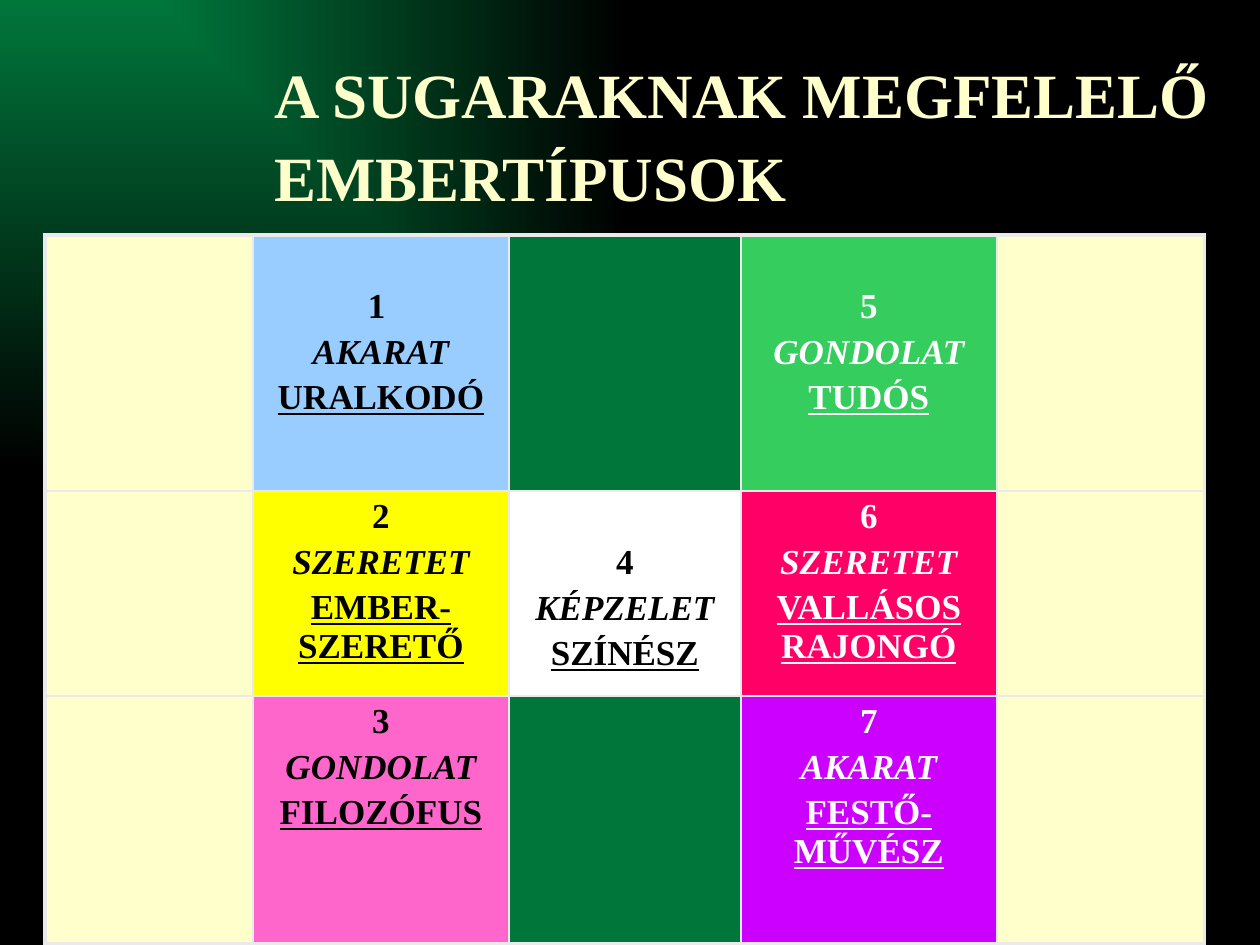
from lxml import etree
from pptx import Presentation
from pptx.dml.color import RGBColor
from pptx.enum.text import MSO_ANCHOR, PP_ALIGN
from pptx.oxml.ns import qn
from pptx.util import Pt

PX = 914400 // 126
FONT = "Times New Roman"
MIDDLE = MSO_ANCHOR.MIDDLE
CENTER = PP_ALIGN.CENTER

GREEN = RGBColor(0x00, 0x76, 0x3B)
BLACK = RGBColor(0x00, 0x00, 0x00)
WHITE = RGBColor(0xFF, 0xFF, 0xFF)
CREAM = RGBColor(0xFF, 0xFF, 0xCC)
BLUE = RGBColor(0x99, 0xCC, 0xFF)
LIME = RGBColor(0x35, 0xCD, 0x5D)
YELLOW = RGBColor(0xFF, 0xFF, 0x00)
RED = RGBColor(0xFF, 0x00, 0x66)
PINK = RGBColor(0xFF, 0x66, 0xCC)
PURPLE = RGBColor(0xCC, 0x00, 0xFF)
BORDER = RGBColor(0xEA, 0xEA, 0xEA)

TITLE = "A SUGARAKNAK MEGFELELŐ EMBERTÍPUSOK"
TITLE_BOX = (262, 32, 977, 199)
TABLE_LEFT, TABLE_TOP = 45, 235
COLUMN_WIDTHS = [208, 256, 232, 256, 208]
ROW_HEIGHTS = [256, 205, 248]
TOP_INSET, LOWERED_INSET = 6, 52

SIDE = (CREAM, BLACK, TOP_INSET, ())
GAP = (GREEN, BLACK, TOP_INSET, ())
RAYS = [
    [SIDE,
     (BLUE, BLACK, LOWERED_INSET, ("1 ", "AKARAT", "URALKODÓ")),
     GAP,
     (LIME, WHITE, LOWERED_INSET, ("5", "GONDOLAT", "TUDÓS")),
     SIDE],
    [SIDE,
     (YELLOW, BLACK, TOP_INSET, ("2", "SZERETET", "EMBER-SZERETŐ")),
     (WHITE, BLACK, LOWERED_INSET, ("4", "KÉPZELET", "SZÍNÉSZ")),
     (RED, WHITE, TOP_INSET, ("6", "SZERETET", "VALLÁSOS RAJONGÓ")),
     SIDE],
    [SIDE,
     (PINK, BLACK, TOP_INSET, ("3", "GONDOLAT", "FILOZÓFUS")),
     GAP,
     (PURPLE, WHITE, TOP_INSET, ("7", "AKARAT", "FESTŐ-MŰVÉSZ")),
     SIDE],
]


def style_font(paragraph, size, color):
    font = paragraph.font
    font.name = FONT
    font.size = Pt(size)
    font.bold = True
    font.color.rgb = color
    return font


def paint_background(slide):
    fill = slide.background.fill
    fill.gradient()
    for stop, color in zip(fill.gradient_stops, (GREEN, BLACK)):
        stop.color.rgb = color
    for stop, position in zip(fill.gradient_stops, (0, 1)):
        stop.position = position
    gradient = slide.element.find(".//" + qn("a:gradFill"))
    gradient.remove(gradient.find(qn("a:lin")))
    shade = etree.SubElement(gradient, qn("a:path"), path="rect")
    etree.SubElement(shade, qn("a:fillToRect"), r="100000", b="100000")


def add_title(slide):
    frame = slide.shapes.add_textbox(*(n * PX for n in TITLE_BOX)).text_frame
    frame.word_wrap = True
    frame.vertical_anchor = MIDDLE
    heading = frame.paragraphs[0]
    heading.text = TITLE
    heading.line_spacing = 1.09
    style_font(heading, 36, CREAM)


def draw_borders(cell, row, column):
    outer = {
        "a:lnL": column == 0,
        "a:lnR": column == len(COLUMN_WIDTHS) - 1,
        "a:lnT": row == 0,
        "a:lnB": row == len(ROW_HEIGHTS) - 1,
    }
    properties = cell._tc.get_or_add_tcPr()
    for side, is_outer in outer.items():
        width = Pt(2.25 if is_outer else 1)
        line = etree.SubElement(properties, qn(side), w=str(width))
        solid = etree.SubElement(line, qn("a:solidFill"))
        etree.SubElement(solid, qn("a:srgbClr"), val=str(BORDER))


def write_ray(cell, color, inset, lines):
    cell.margin_top = inset * PX
    frame = cell.text_frame
    frame.text = "\n".join(lines)
    for index, paragraph in enumerate(frame.paragraphs):
        paragraph.alignment = CENTER
        paragraph.space_before = Pt(4 if index else 0)
        font = style_font(paragraph, 20, color)
        font.italic = index == 1
        font.underline = index == 2


def add_rays(slide):
    table = slide.shapes.add_table(
        len(ROW_HEIGHTS), len(COLUMN_WIDTHS), TABLE_LEFT * PX, TABLE_TOP * PX,
        sum(COLUMN_WIDTHS) * PX, sum(ROW_HEIGHTS) * PX).table
    table.first_row = False
    table.horz_banding = False
    for column, width in zip(table.columns, COLUMN_WIDTHS):
        column.width = width * PX
    for row, height in zip(table.rows, ROW_HEIGHTS):
        row.height = height * PX
    for r, rays in enumerate(RAYS):
        for c, (background, color, inset, lines) in enumerate(rays):
            cell = table.cell(r, c)
            draw_borders(cell, r, c)
            cell.fill.solid()
            cell.fill.fore_color.rgb = background
            if lines:
                write_ray(cell, color, inset, lines)


def main():
    deck = Presentation()
    deck.slide_width = 1260 * PX
    deck.slide_height = 945 * PX
    slide = deck.slides.add_slide(deck.slide_layouts[6])
    paint_background(slide)
    add_title(slide)
    add_rays(slide)
    deck.save("out.pptx")


if __name__ == "__main__":
    main()
